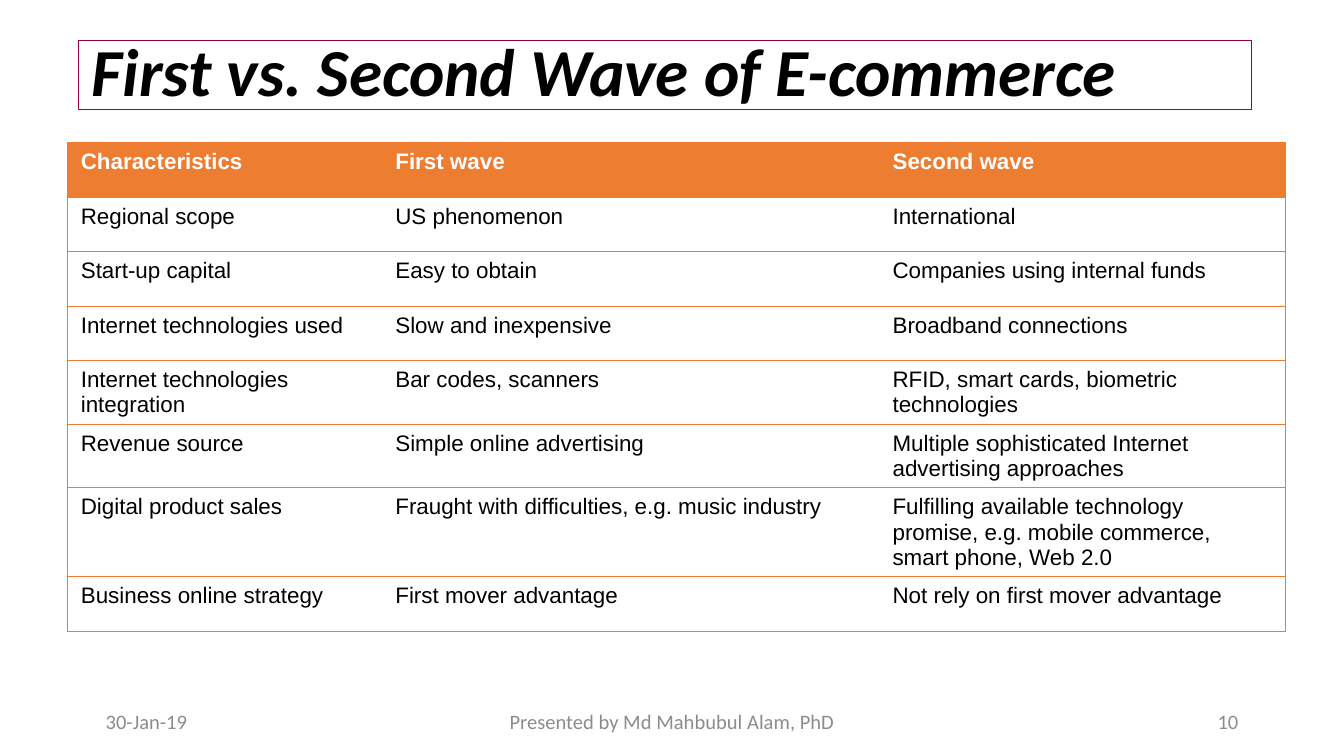
"""Build the slide comparing the first and second wave of e-commerce."""
import pptx
import pptx.dml.color
import pptx.enum.text
import pptx.oxml
import pptx.oxml.ns
import pptx.util

Pt = pptx.util.Pt
ALIGN = pptx.enum.text.PP_ALIGN
ANCHOR = pptx.enum.text.MSO_ANCHOR

COLORS = {
    "accent": "ED7D31",
    "frame": "990033",
    "text": "000000",
    "white": "FFFFFF",
    "footer": "8C8C8C",
}
COLUMN_WIDTHS = (168.5, 266.4, 217.4)
ROW_HEIGHT = 29.2
ROWS = (
    ("Characteristics", "First wave", "Second wave"),
    ("Regional scope", "US phenomenon", "International"),
    ("Start-up capital", "Easy to obtain", "Companies using internal funds"),
    ("Internet technologies used", "Slow and inexpensive", "Broadband connections"),
    ("Internet technologies integration", "Bar codes, scanners",
     "RFID, smart cards, biometric technologies"),
    ("Revenue source", "Simple online advertising",
     "Multiple sophisticated Internet advertising approaches"),
    ("Digital product sales", "Fraught with difficulties, e.g. music industry",
     "Fulfilling available technology promise, e.g. mobile commerce, smart phone, Web 2.0"),
    ("Business online strategy", "First mover advantage", "Not rely on first mover advantage"),
)
FOOTERS = (
    ("30-Jan-19", 49.5, 162, ALIGN.LEFT),
    ("Presented by Md Mahbubul Alam, PhD", 238.5, 243, ALIGN.CENTER),
    ("10", 508.5, 162, ALIGN.RIGHT),
)


def rgb(name):
    return pptx.dml.color.RGBColor.from_string(COLORS[name])


def set_text(tf, text, size, color="text", font="Calibri", bold=False, italic=False,
             align=ALIGN.LEFT, spacing=None):
    p = tf.paragraphs[0]
    p.alignment = align
    p.line_spacing = spacing
    r = p.add_run()
    r.text = text
    r.font.name = font
    r.font.size = Pt(size)
    r.font.bold = bold
    r.font.italic = italic
    r.font.color.rgb = rgb(color)


def add_title(s, text):
    sp = s.shapes.title
    sp.left, sp.top, sp.width, sp.height = Pt(42), Pt(21.8), Pt(628.5), Pt(36.9)
    sp.line.color.rgb = rgb("frame")
    sp.line.width = Pt(0.75)
    tf = sp.text_frame
    tf.auto_size = pptx.enum.text.MSO_AUTO_SIZE.NONE
    tf.vertical_anchor = ANCHOR.MIDDLE
    set_text(tf, text, 36, bold=True, italic=True, spacing=0.9)


def set_borders(cell, visible):
    tc_pr = cell._tc.get_or_add_tcPr()
    for side in "LRTB":
        fill = (f'<a:solidFill><a:srgbClr val="{COLORS["accent"]}"/></a:solidFill>'
                if side in visible else "<a:noFill/>")
        tc_pr.append(pptx.oxml.parse_xml(
            f'<a:ln{side} {pptx.oxml.ns.nsdecls("a")} w="{Pt(0.5)}">{fill}</a:ln{side}>'))


def add_comparison(s):
    last = len(COLUMN_WIDTHS) - 1
    frame = s.shapes.add_table(len(ROWS), len(COLUMN_WIDTHS), Pt(36.1), Pt(76.4),
                               Pt(sum(COLUMN_WIDTHS)), Pt(ROW_HEIGHT * len(ROWS)))
    table = frame.table
    table.horz_banding = False
    for column, width in zip(table.columns, COLUMN_WIDTHS):
        column.width = Pt(width)
    for i, row in enumerate(ROWS):
        table.rows[i].height = Pt(ROW_HEIGHT)
        header = i == 0
        for j, text in enumerate(row):
            cell = table.cell(i, j)
            set_text(cell.text_frame, text, 12, font="Arial", bold=header,
                     color="white" if header else "text")
            set_borders(cell, "TB" + "L" * (j == 0) + "R" * (j == last))
            if header:
                cell.fill.solid()
                cell.fill.fore_color.rgb = rgb("accent")
            else:
                cell.fill.background()


def add_footer(s, text, left, width, align):
    tf = s.shapes.add_textbox(Pt(left), Pt(375.4), Pt(width), Pt(21.6)).text_frame
    tf.word_wrap = True
    tf.vertical_anchor = ANCHOR.MIDDLE
    set_text(tf, text, 11, color="footer", align=align)


def main():
    prs = pptx.Presentation()
    prs.slide_width, prs.slide_height = Pt(720), Pt(405)
    s = prs.slides.add_slide(prs.slide_layouts[5])
    add_title(s, "First vs. Second Wave of E-commerce")
    add_comparison(s)
    for footer in FOOTERS:
        add_footer(s, *footer)
    prs.save("out.pptx")


if __name__ == "__main__":
    main()
